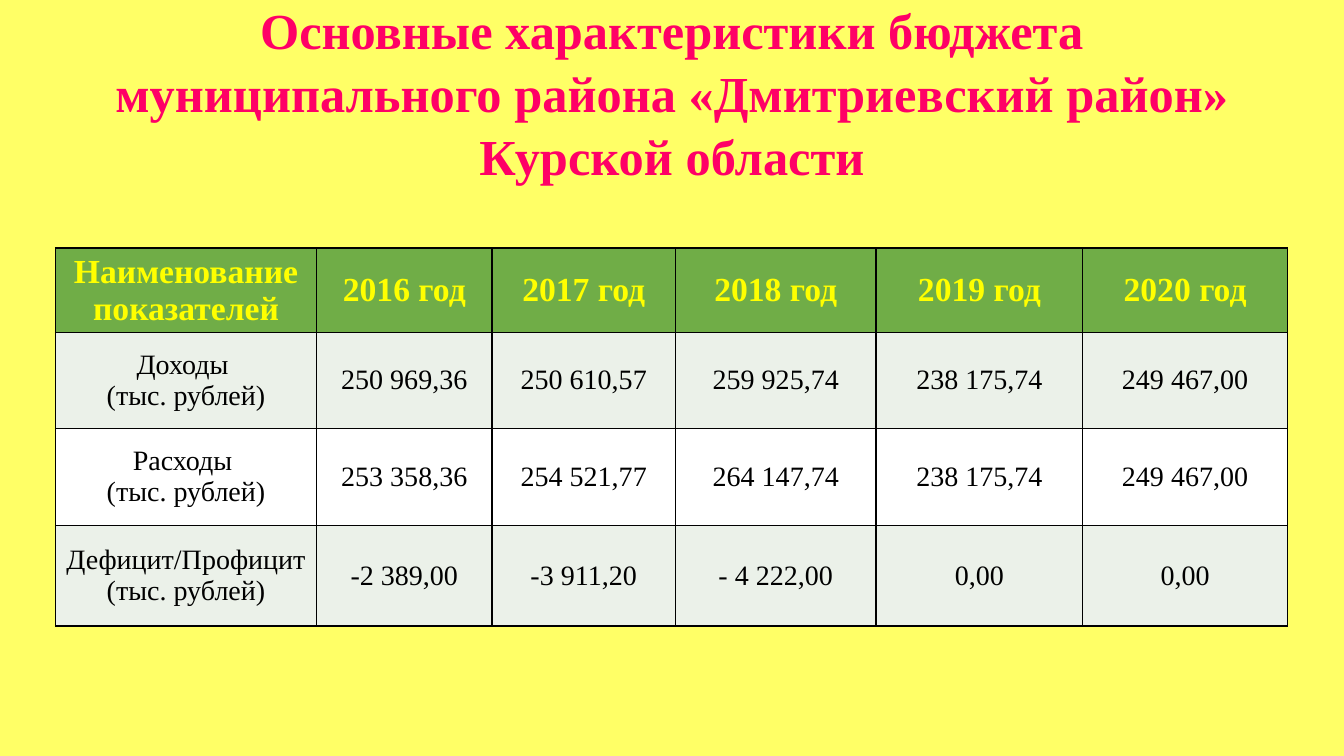
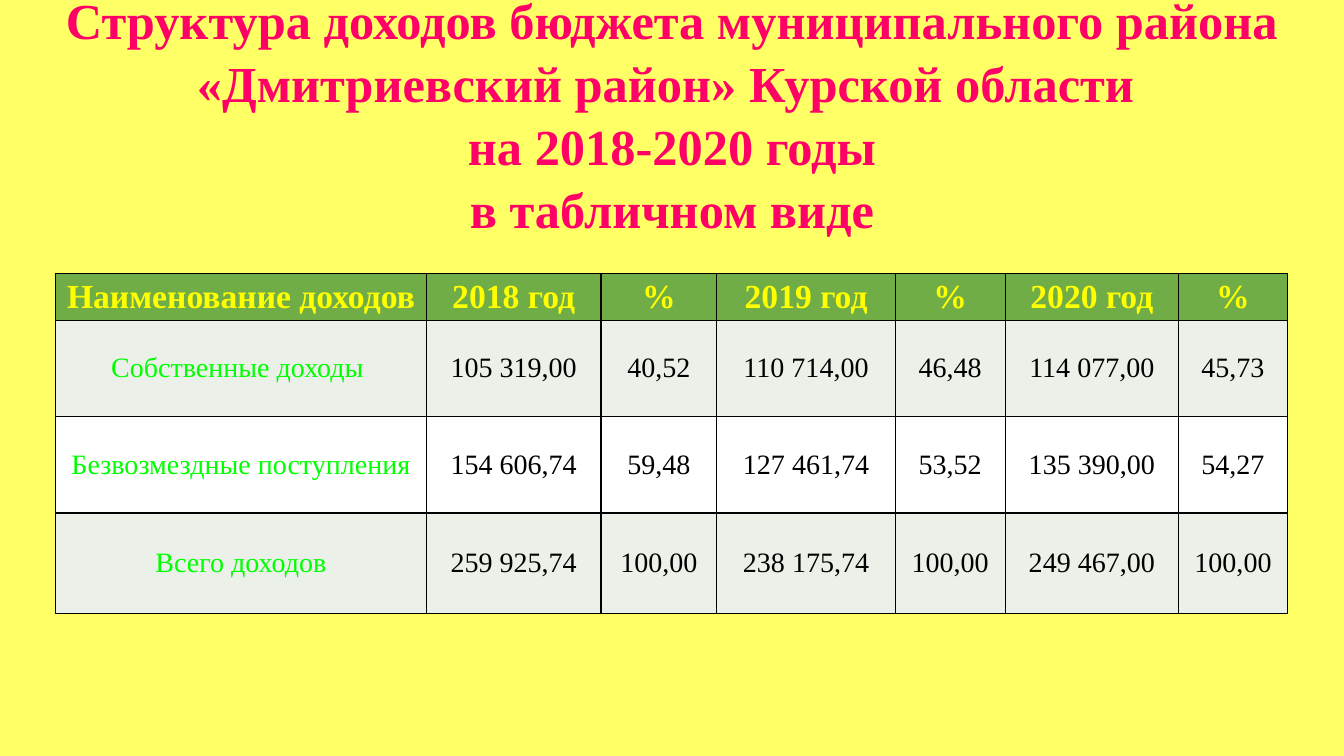
from lxml import etree
from pptx import Presentation
from pptx.dml.color import RGBColor
from pptx.enum.text import MSO_ANCHOR, PP_ALIGN
from pptx.oxml.ns import qn
from pptx.util import Inches, Pt

MIDDLE = MSO_ANCHOR.MIDDLE
CENTER = PP_ALIGN.CENTER
FONT = "Times New Roman"
COLORS = {
    "page": "FFFF66",
    "title": "FF0066",
    "header": "70AD47",
    "header_text": "FFFF00",
    "odd": "EBF1E9",
    "even": "FFFFFF",
    "text": "000000",
    "income": "00FF00",
    "line": "000000",
}
WIDTH, HEIGHT = 13.33, 7.5
TABLE_LEFT = 0.55
BODY_ROWS = [0.95, 0.96, 1]
TITLE_ONLY = 5

SLIDES = [
    {
        "title": [
            ("Основные характеристики бюджета", -1.27),
            ("муниципального района «Дмитриевский район»", -0.27),
            ("Курской области", 0),
        ],
        "title_height": 1.81,
        "top": 2.46,
        "header_height": 0.84,
        "cols": [2.59, 1.74, 1.82, 1.99, 2.05, 2.03],
        "label_style": {"color": "text"},
        "rows": [
            ["Наименование показателей", "2016 год", "2017 год", "2018 год", "2019 год", "2020 год"],
            ["Доходы \n(тыс. рублей)", "250 969,36", "250 610,57", "259 925,74", "238 175,74", "249 467,00"],
            ["Расходы \n(тыс. рублей)", "253 358,36", "254 521,77", "264 147,74", "238 175,74", "249 467,00"],
            ["Дефицит/Профицит\n(тыс. рублей)", "-2 389,00", "-3 911,20", "- 4 222,00", "0,00", "0,00"],
        ],
    },
    {
        "title": [
            ("Структура доходов бюджета муниципального района", 0),
            ("«Дмитриевский район» Курской области ", 0),
            ("на 2018-2020 годы", 0),
            ("в табличном виде", 0),
        ],
        "title_height": 2.24,
        "top": 2.71,
        "header_height": 0.47,
        "cols": [3.68, 1.73, 1.15, 1.77, 1.09, 1.72, 1.08],
        "label_style": {"color": "income", "outline": True},
        "rows": [
            ["Наименование доходов", "2018 год", "%", "2019 год", "%", "2020 год", "%"],
            ["Собственные доходы ", "105 319,00", "40,52", "110 714,00", "46,48", "114 077,00", "45,73"],
            ["Безвозмездные поступления", "154 606,74", "59,48", "127 461,74", "53,52", "135 390,00", "54,27"],
            ["Всего доходов", "259 925,74", "100,00", "238 175,74", "100,00", "249 467,00", "100,00"],
        ],
    },
]


def rgb(name):
    return RGBColor.from_string(COLORS[name])


def make_line(tag, width):
    ln = etree.Element(qn(tag), w=str(Pt(width)))
    fill = etree.SubElement(ln, qn("a:solidFill"))
    etree.SubElement(fill, qn("a:srgbClr"), val=COLORS["line"])
    return ln


def add_text(p, text, size=20, color="text", bold=False, outline=False):
    p.alignment = CENTER
    r = p.add_run()
    r.text = text
    r.font.name = FONT
    r.font.size = Pt(size)
    r.font.bold = bold
    r.font.color.rgb = rgb(color)
    if outline:
        r._r.get_or_add_rPr().insert(0, make_line("a:ln", 0.75))


def paragraphs(tf, count):
    return [tf.paragraphs[0]] + [tf.add_paragraph() for _ in range(count - 1)]


def fill_title(sp, lines, height):
    sp.left, sp.top, sp.width, sp.height = 0, 0, Inches(WIDTH), Inches(height)
    tf = sp.text_frame
    tf.word_wrap = True
    tf.vertical_anchor = MIDDLE
    for p, (text, indent) in zip(paragraphs(tf, len(lines)), lines):
        add_text(p, text, size=36, color="title", bold=True, outline=True)
        p.line_spacing = 1.04
        p.space_before = Pt(0)
        if indent:
            pPr = p._p.get_or_add_pPr()
            pPr.set("marL", "0")
            pPr.set("indent", str(Inches(indent)))


def fill_cell(cell, text, fill, **style):
    cell.vertical_anchor = MIDDLE
    cell.margin_left = cell.margin_right = Inches(0.07)
    cell.margin_top = cell.margin_bottom = 0
    lines = text.split("\n")
    for p, line in zip(paragraphs(cell.text_frame, len(lines)), lines):
        add_text(p, line, **style)
    cell.fill.solid()
    cell.fill.fore_color.rgb = rgb(fill)
    tcPr = cell._tc.get_or_add_tcPr()
    for i, side in enumerate("LRTB"):
        tcPr.insert(i, make_line(f"a:ln{side}", 1))


def add_budget_table(s, top, header_height, cols, rows, label_style):
    heights = [header_height] + BODY_ROWS
    frame = s.shapes.add_table(len(rows), len(cols), Inches(TABLE_LEFT), Inches(top),
                               Inches(sum(cols)), Inches(sum(heights)))
    table = frame.table
    for col, width in zip(table.columns, cols):
        col.width = Inches(width)
    for i, (row, height, texts) in enumerate(zip(table.rows, heights, rows)):
        row.height = Inches(height)
        for j, (cell, text) in enumerate(zip(row.cells, texts)):
            if i == 0:
                fill_cell(cell, text, "header", size=24, color="header_text", bold=True)
            else:
                style = label_style if j == 0 else {}
                fill_cell(cell, text, "odd" if i % 2 else "even", **style)


def add_budget_slide(prs, title, title_height, **table):
    s = prs.slides.add_slide(prs.slide_layouts[TITLE_ONLY])
    fill_title(s.shapes.title, title, title_height)
    add_budget_table(s, **table)


def main():
    prs = Presentation()
    prs.slide_width, prs.slide_height = Inches(WIDTH), Inches(HEIGHT)
    background = prs.slide_master.background.fill
    background.solid()
    background.fore_color.rgb = rgb("page")
    for slide in SLIDES:
        add_budget_slide(prs, **slide)
    prs.save("out.pptx")


if __name__ == "__main__":
    main()
